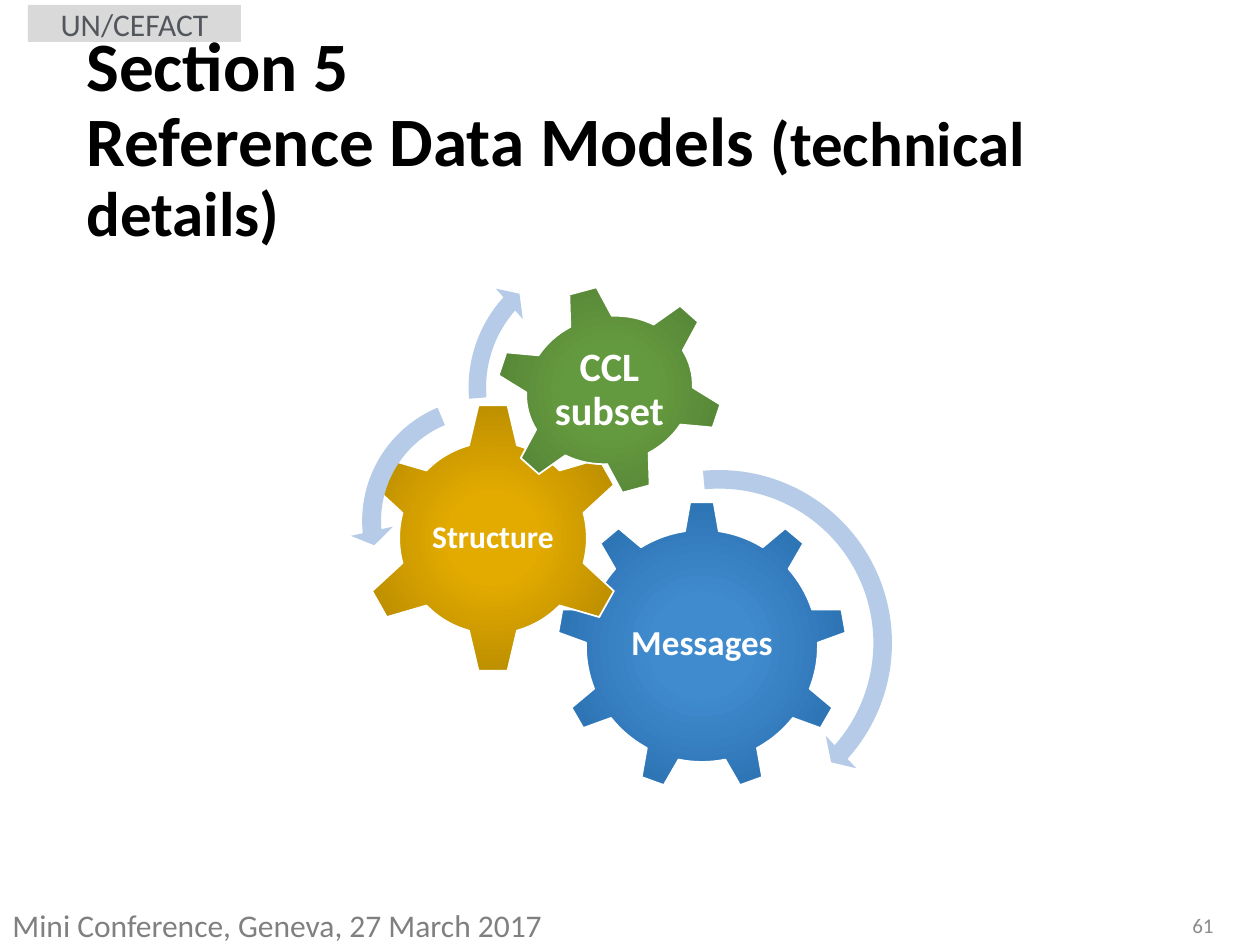
from lxml import etree
from pptx import Presentation
from pptx.dml.color import RGBColor
from pptx.enum.shapes import MSO_SHAPE
from pptx.enum.text import MSO_ANCHOR, PP_ALIGN
from pptx.oxml import parse_xml
from pptx.oxml.ns import nsdecls
from pptx.util import Emu, Pt

RECTANGLE = MSO_SHAPE.RECTANGLE
GEAR_6, GEAR_9 = MSO_SHAPE.GEAR_6, MSO_SHAPE.GEAR_9
CLOCKWISE = MSO_SHAPE.CIRCULAR_ARROW
COUNTERCLOCKWISE = MSO_SHAPE.LEFT_CIRCULAR_ARROW
TOP, MIDDLE = MSO_ANCHOR.TOP, MSO_ANCHOR.MIDDLE
LEFT, CENTER, RIGHT = PP_ALIGN.LEFT, PP_ALIGN.CENTER, PP_ALIGN.RIGHT

BLACK = RGBColor(0x00, 0x00, 0x00)
WHITE = RGBColor(0xFF, 0xFF, 0xFF)
BANNER_FILL = RGBColor(0xD9, 0xD9, 0xD9)
BANNER_TEXT = RGBColor(0x53, 0x57, 0x5C)
FOOTER_GRAY = RGBColor(0x80, 0x80, 0x80)
NUMBER_GRAY = RGBColor(0x8C, 0x8C, 0x8C)
ARROW_BLUE = RGBColor(0xB5, 0xCB, 0xE7)
BLUES = [RGBColor(0x40, 0x8B, 0xCE), RGBColor(0x2E, 0x75, 0xB6), RGBColor(0x2B, 0x6D, 0xA9)]
GOLDS = [RGBColor(0xE3, 0xAB, 0x00), RGBColor(0xBF, 0x90, 0x00), RGBColor(0xB2, 0x86, 0x00)]
GREENS = [RGBColor(0x64, 0x9A, 0x3F), RGBColor(0x54, 0x82, 0x35), RGBColor(0x4E, 0x79, 0x32)]

FONT = "Calibri"
EMU_PER_PX = 914400 / 126
LABEL_INSET = 4


def px(length):
    return Emu(round(length * EMU_PER_PX))


def place(box):
    return [px(length) for length in box]


def add_run(paragraph, text, size, color, bold=False):
    run = paragraph.add_run()
    run.text = text
    run.font.name = FONT
    run.font.size = Pt(size)
    run.font.bold = bold
    run.font.color.rgb = color


def add_text(slide, box, align=LEFT, anchor=TOP, spacing=1.0, inset=None):
    frame = slide.shapes.add_textbox(*place(box)).text_frame
    frame.word_wrap = True
    frame.vertical_anchor = anchor
    if inset is not None:
        frame.margin_left = frame.margin_right = px(inset)
        frame.margin_top = frame.margin_bottom = px(inset)
    paragraph = frame.paragraphs[0]
    paragraph.alignment = align
    paragraph.line_spacing = spacing
    return paragraph


def add_flat_shape(slide, kind, box, fill):
    shape = slide.shapes.add_shape(kind, *place(box))
    shape.shadow.inherit = False
    shape.fill.solid()
    shape.fill.fore_color.rgb = fill
    shape.line.fill.background()
    return shape


def add_banner(slide, box, text):
    banner = add_flat_shape(slide, RECTANGLE, box, BANNER_FILL)
    banner.text_frame.vertical_anchor = MIDDLE
    paragraph = banner.text_frame.paragraphs[0]
    paragraph.alignment = CENTER
    add_run(paragraph, text, 18, BANNER_TEXT)


def add_title(slide, box):
    title = add_text(slide, box, anchor=MIDDLE, spacing=0.9)
    add_run(title, "Section 5 ", 39.6, BLACK, True)
    title.add_line_break()
    add_run(title, "Reference Data Models ", 39.6, BLACK, True)
    add_run(title, "(technical details)", 36, BLACK, True)


def radial_fill(colors):
    center, middle, edge = colors
    gradient = parse_xml(
        f'<a:gradFill {nsdecls("a")} rotWithShape="1"><a:gsLst/>'
        '<a:path path="circle"><a:fillToRect l="50000" t="50000" r="50000" b="50000"/>'
        '</a:path></a:gradFill>')
    namespace = "{%s}" % gradient.nsmap["a"]
    for percent, color in ((0, center), (23, center), (69, middle), (97, edge)):
        stop = etree.SubElement(gradient[0], namespace + "gs", pos=str(percent * 1000))
        etree.SubElement(stop, namespace + "srgbClr", val=str(color))
    return gradient


def add_gear(slide, kind, box, colors, label_box, label, size, rotation=0):
    gear = slide.shapes.add_shape(kind, *place(box))
    gear.shadow.inherit = False
    gear.rotation = rotation
    gear.line.color.rgb = WHITE
    gear.line.width = Pt(1)
    properties = gear._element.spPr
    properties.insert(2, radial_fill(colors))
    caption = add_text(slide, label_box, CENTER, MIDDLE, 0.9, LABEL_INSET)
    add_run(caption, label, size, WHITE, True)


def add_turn_arrow(slide, kind, box, adjustments):
    arrow = add_flat_shape(slide, kind, box, ARROW_BLUE)
    for index, value in enumerate(adjustments):
        arrow.adjustments[index] = value


def main():
    presentation = Presentation()
    presentation.slide_width = px(1260)
    presentation.slide_height = px(945)
    slide = presentation.slides.add_slide(presentation.slide_layouts[6])

    add_banner(slide, (28, 5, 213, 37), "UN/CEFACT")
    add_title(slide, (74, 97, 1150, 88))
    number = add_text(slide, (848, 900, 378, 50), RIGHT, MIDDLE)
    add_run(number, "61", 12, NUMBER_GRAY)

    add_gear(slide, GEAR_9, (557, 501, 290, 290), BLUES,
             (615, 570, 174, 149), "Messages", 20)
    add_gear(slide, GEAR_6, (359, 402, 268, 272), GOLDS,
             (426, 471, 134, 135), "Structure", 18)
    add_gear(slide, GEAR_6, (494, 285, 231, 210), GREENS,
             (546, 330, 127, 121), "CCL subset", 23, 345)

    add_turn_arrow(slide, CLOCKWISE, (533, 457, 372, 372), (0.05, 2.99, 25.07, 158.81, 0.06))
    add_turn_arrow(slide, COUNTERCLOCKWISE, (350, 386, 270, 270),
                   (0.07, 4.3, 104.89, 148.38, 0.08))
    add_turn_arrow(slide, CLOCKWISE, (457, 242, 291, 291), (0.06, 3.94, 133.14, 105.08, 0.07))

    footer = add_text(slide, (0, 900, 716, 50))
    add_run(footer, "Mini Conference, Geneva, 27 March 2017", 18, FOOTER_GRAY)

    presentation.save("out.pptx")


if __name__ == "__main__":
    main()
